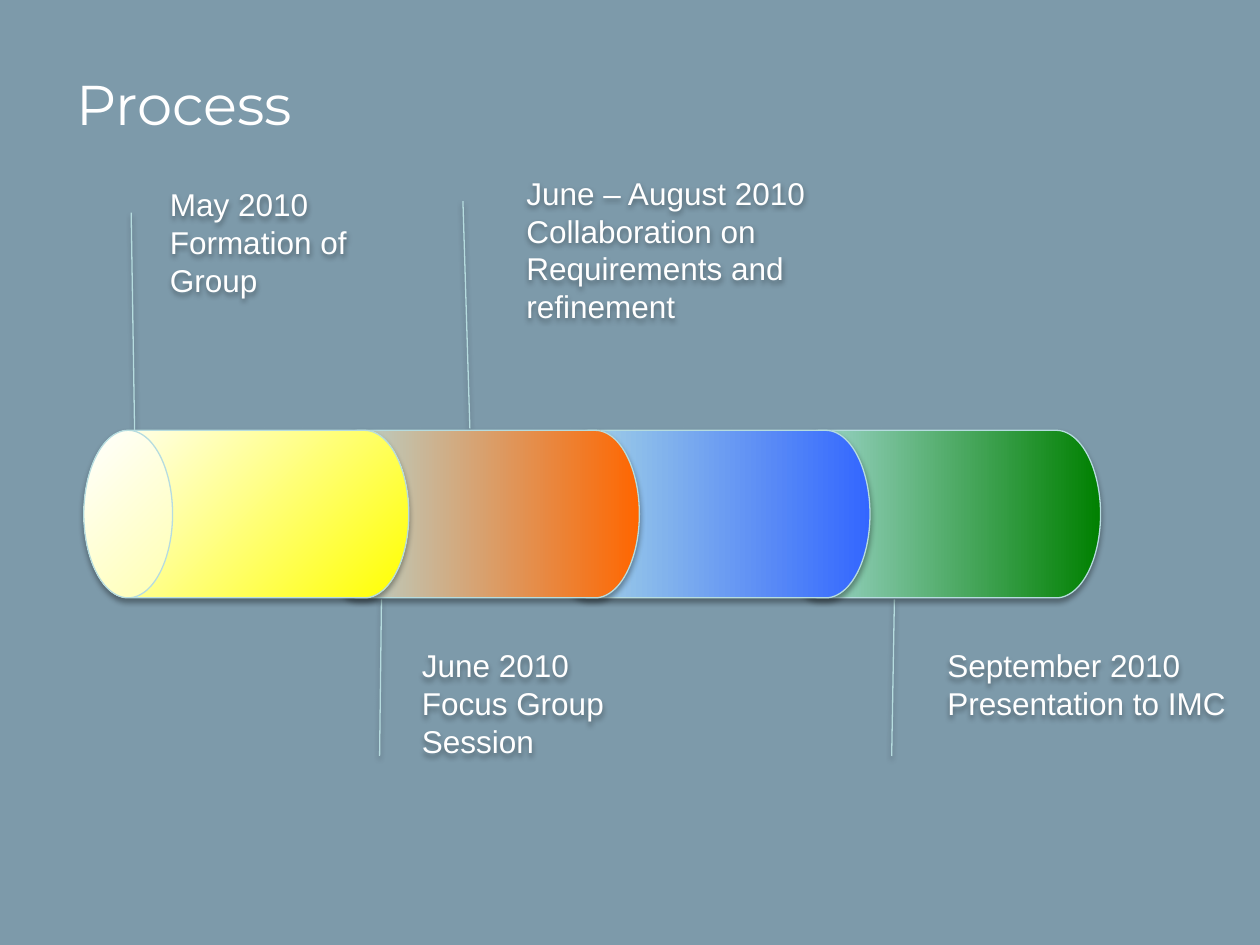
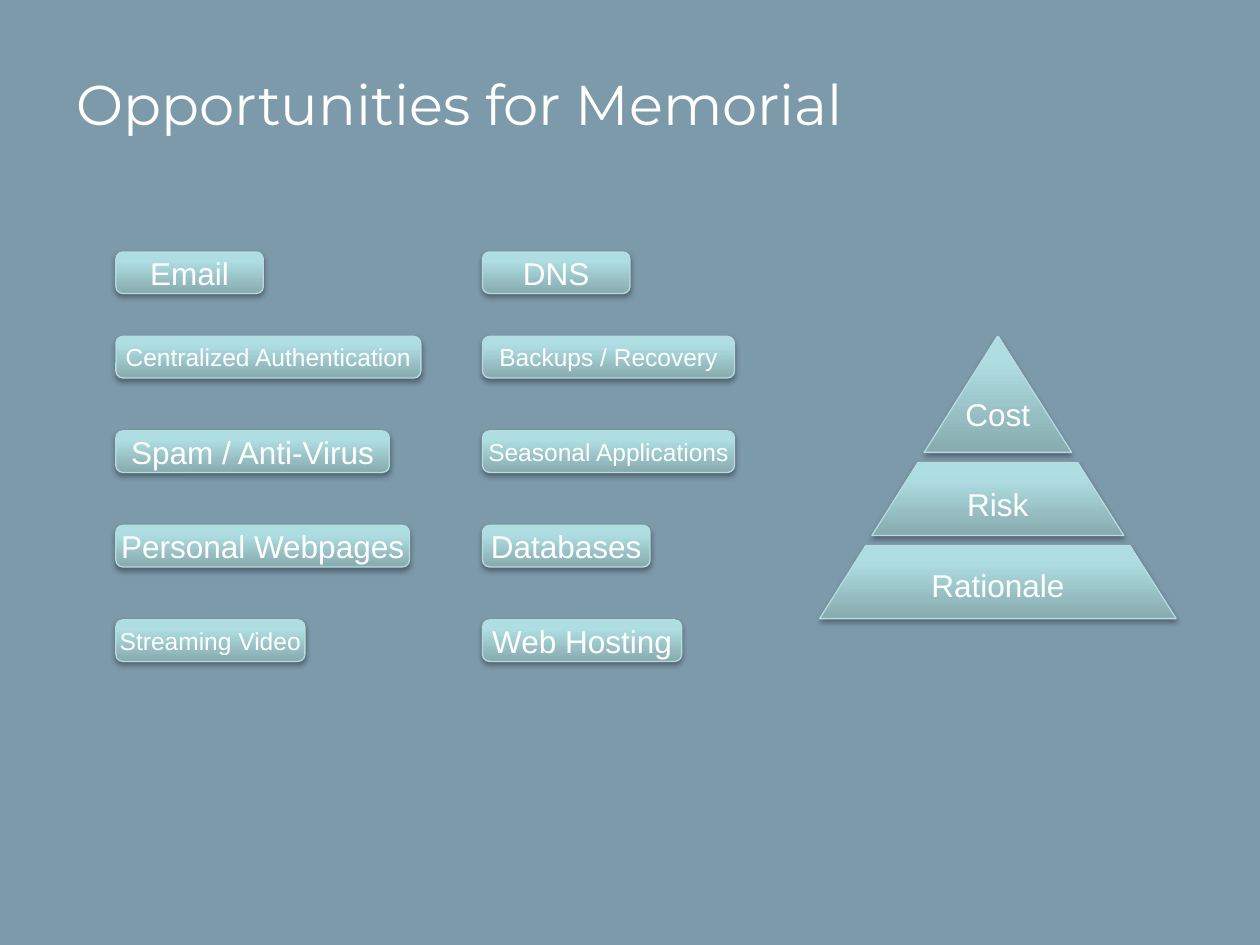
import pptx
import pptx.dml.color
import pptx.enum.shapes
import pptx.enum.text
import pptx.oxml
import pptx.oxml.ns
import pptx.util

Inches = pptx.util.Inches
Pt = pptx.util.Pt
SHAPE = pptx.enum.shapes.MSO_SHAPE
ANCHOR = pptx.enum.text.MSO_ANCHOR
ALIGN = pptx.enum.text.PP_ALIGN
NS = 'xmlns:a="http://schemas.openxmlformats.org/drawingml/2006/main"'

BACKGROUND = "7D9AAA"
WHITE = "FFFFFF"
OUTLINE = "B6DCDF"
PALE = [(99, "AFDEE2"), (100, "AFE0E4")]
TEAL = [(0, "87ABAE"), (80, "AFDEE2"), (100, "AFE0E4")]
UPWARD = '<a:lin ang="16200000" scaled="0"/>'
CORNER = '<a:path path="circle"><a:fillToRect l="100000" t="100000"/></a:path>'
TITLE_FONT = {"name": "Montserrat", "size": Pt(32)}


def rgb(hex_color):
    return pptx.dml.color.RGBColor.from_string(hex_color)


def set_attrs(obj, values):
    for name, value in values.items():
        setattr(obj, name, value)


def box(left, top, width, height):
    return [Inches(v) for v in (left, top, width, height)]


def add_shadow(sp):
    sp.shadow.inherit = False
    effects = sp._element.spPr.find(pptx.oxml.ns.qn("a:effectLst"))
    effects.append(pptx.oxml.parse_xml(
        f'<a:outerShdw {NS} blurRad="40000" dist="23000" dir="5400000" rotWithShape="0">'
        '<a:srgbClr val="000000"><a:alpha val="35000"/></a:srgbClr></a:outerShdw>'))


def set_gradient(sp, stops, direction, turns=1):
    sp.fill.gradient()
    old = sp._element.spPr.find(pptx.oxml.ns.qn("a:gradFill"))
    marks = "".join(f'<a:gs pos="{pos * 1000}"><a:srgbClr val="{color}"/></a:gs>'
                    for pos, color in stops)
    new = pptx.oxml.parse_xml(f'<a:gradFill {NS} rotWithShape="{turns}">'
                              f'<a:gsLst>{marks}</a:gsLst>{direction}</a:gradFill>')
    old.getparent().replace(old, new)


def add_figure(shapes, kind, place, adjustments=()):
    sp = shapes.add_shape(kind, *box(*place))
    for i, value in enumerate(adjustments):
        sp.adjustments[i] = value
    sp.line.color.rgb = rgb(OUTLINE)
    sp.line.width = Pt(0.75)
    add_shadow(sp)
    return sp


def write(sp, lines, size=18, frame=None, para=None):
    tf = sp.text_frame
    set_attrs(tf, {"word_wrap": True, **(frame or {})})
    for i, line in enumerate(lines):
        p = tf.paragraphs[0] if i == 0 else tf.add_paragraph()
        set_attrs(p, para or {})
        r = p.add_run()
        r.text = line
        set_attrs(r.font, {"name": "Arial", "size": Pt(size)})
        r.font.color.rgb = rgb(WHITE)


def add_callout(s, place, pointer, lines):
    sp = add_figure(s.shapes, SHAPE.LINE_CALLOUT_1_NO_BORDER, place, pointer)
    sp.fill.background()
    write(sp, lines, frame={"vertical_anchor": ANCHOR.TOP},
          para={"alignment": ALIGN.LEFT})


def add_can(s, left, stops, direction, turns=1):
    sp = add_figure(s.shapes, SHAPE.CAN, (left, 2.79, 1.33, 2.58), [0.53])
    sp.rotation = 270
    set_gradient(sp, stops, direction, turns)


def add_label(shapes, kind, place, text, size=18, wrap=True, adjustments=(), after=0):
    sp = add_figure(shapes, kind, place, adjustments)
    set_gradient(sp, TEAL, UPWARD)
    write(sp, [text], size,
          {"vertical_anchor": ANCHOR.MIDDLE, "word_wrap": wrap},
          {"alignment": ALIGN.CENTER, "space_after": Pt(after)})


def add_slide(prs, title):
    s = prs.slides.add_slide(prs.slide_layouts[5])
    sp = s.shapes.title
    left, top, width, height = box(0.51, 0.4, 7.66, 0.84)
    set_attrs(sp, {"left": left, "top": top, "width": width, "height": height})
    sp.text_frame.text = title
    sp.text_frame.vertical_anchor = ANCHOR.MIDDLE
    p = sp.text_frame.paragraphs[0]
    p.alignment = ALIGN.LEFT
    set_attrs(p.runs[0].font, TITLE_FONT)
    p.runs[0].font.color.rgb = rgb(WHITE)
    return s


def build_process(prs):
    s = add_slide(prs, "Process")
    down = (0.188, -0.125, 1.458, -0.108)
    up = (0.648, -0.142, -0.228, -0.133)
    callouts = [
        ((1.25, 1.42, 1.67, 1.42), down, ["May 2010", "Formation of Group"]),
        ((4.08, 1.33, 3.25, 1.42), down,
         ["June – August 2010", "Collaboration on Requirements and refinement"]),
        ((3.25, 5.08, 1.67, 1.42), up, ["June 2010", "Focus Group Session"]),
        ((7.42, 5.08, 2.42, 1.42), up, ["September 2010", "Presentation to IMC"]),
    ]
    for place, pointer, lines in callouts:
        add_callout(s, place, pointer, lines)
    first, pitch = 1.29, 1.83
    for step, color in ((3, "008000"), (2, "3366FF"), (1, "FF6600")):
        add_can(s, first + step * pitch, [(0, color)] + PALE, UPWARD)
    add_can(s, first, [(0, "FFFF00"), (100, WHITE)], CORNER, 0)


def build_opportunities(prs):
    s = add_slide(prs, "Opportunities for Memorial")
    row_tops = (2, 2.67, 3.42, 4.17, 4.92)
    columns = {
        0.92: [("Email", 1.17, 18, True),
               ("Centralized Authentication", 2.42, 14, False),
               ("Spam / Anti-Virus", 2.17, 18, True),
               ("Personal Webpages", 2.33, 18, False),
               ("Streaming Video", 1.5, 14, False)],
        3.83: [("DNS", 1.17, 18, True),
               ("Backups / Recovery", 2, 14, True),
               ("Seasonal Applications", 2, 14, False),
               ("Databases", 1.33, 18, False),
               ("Web Hosting", 1.58, 18, False)],
    }
    for left, services in columns.items():
        for top, (text, width, size, wrap) in zip(row_tops, services):
            add_label(s.shapes, SHAPE.ROUNDED_RECTANGLE, (left, top, width, 0.33),
                      text, size, wrap)
    pyramid = s.shapes.add_group_shape()
    center = 7.92
    levels = [("Rationale", 2.83, 4.33, 0.58, True),
              ("Risk", 2, 3.67, 0.58, True),
              ("Cost", 1.17, 2.67, 0.92, False)]
    for text, width, top, height, wrap in levels:
        add_label(pyramid.shapes, SHAPE.TRAPEZOID,
                  (center - width / 2, top, width, height), text,
                  wrap=wrap, adjustments=[0.631], after=6)


def main():
    prs = pptx.Presentation()
    prs.slide_width, prs.slide_height = Inches(10), Inches(7.5)
    fill = prs.slide_master.background.fill
    fill.solid()
    fill.fore_color.rgb = rgb(BACKGROUND)
    build_process(prs)
    build_opportunities(prs)
    prs.save("out.pptx")


if __name__ == "__main__":
    main()
